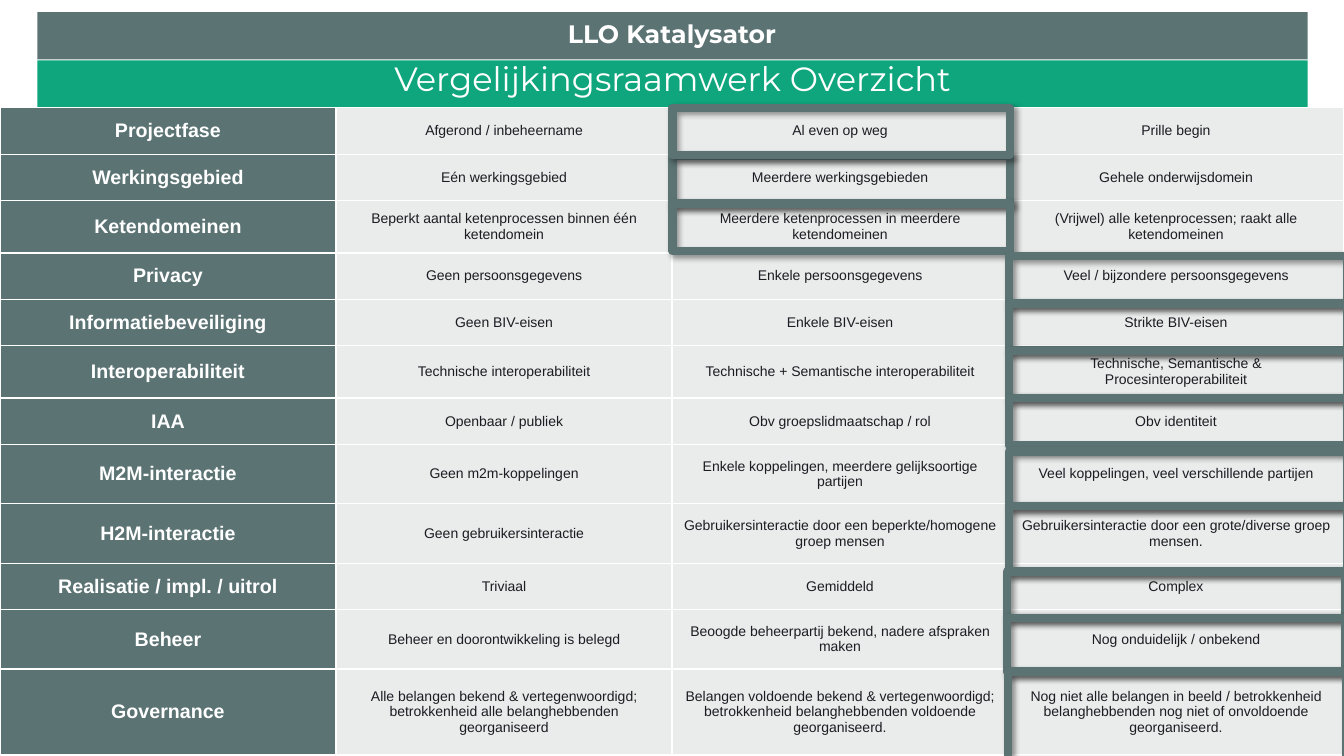
from lxml.etree import SubElement
from pptx import Presentation
from pptx.dml.color import RGBColor
from pptx.enum.shapes import MSO_SHAPE
from pptx.enum.text import MSO_ANCHOR, MSO_AUTO_SIZE, PP_ALIGN
from pptx.oxml import parse_xml
from pptx.oxml.ns import nsdecls, qn
from pptx.util import Inches, Pt

HEAD = "LLO Katalysator"
TITLE = "Vergelijkingsraamwerk Overzicht"
ROWS = [
    (0.46, "Projectfase", "Afgerond / inbeheername", "Al even op weg", "Prille begin"),
    (0.46, "Werkingsgebied", "Eén werkingsgebied", "Meerdere werkingsgebieden",
     "Gehele onderwijsdomein"),
    (0.52, "Ketendomeinen", "Beperkt aantal ketenprocessen binnen één ketendomein",
     "Meerdere ketenprocessen in meerdere ketendomeinen",
     "(Vrijwel) alle ketenprocessen; raakt alle ketendomeinen"),
    (0.46, "Privacy", "Geen persoonsgegevens", "Enkele persoonsgegevens",
     "Veel / bijzondere persoonsgegevens"),
    (0.46, "Informatiebeveiliging", "Geen BIV-eisen", "Enkele BIV-eisen",
     "Strikte BIV-eisen"),
    (0.52, "Interoperabiliteit", "Technische interoperabiliteit",
     "Technische + Semantische interoperabiliteit",
     "Technische, Semantische & Procesinteroperabiliteit"),
    (0.46, "IAA", "Openbaar / publiek", "Obv groepslidmaatschap / rol",
     "Obv identiteit"),
    (0.59, "M2M-interactie", "Geen m2m-koppelingen",
     "Enkele koppelingen, meerdere gelijksoortige partijen",
     "Veel koppelingen, veel verschillende partijen"),
    (0.59, "H2M-interactie", "Geen gebruikersinteractie",
     "Gebruikersinteractie door een beperkte/homogene groep mensen",
     "Gebruikersinteractie door een grote/diverse groep mensen."),
    (0.46, "Realisatie / impl. / uitrol", "Triviaal", "Gemiddeld", "Complex"),
    (0.59, "Beheer", "Beheer en doorontwikkeling is belegd",
     "Beoogde beheerpartij bekend, nadere afspraken maken",
     "Nog onduidelijk / onbekend"),
    (0.85, "Governance",
     "Alle belangen bekend & vertegenwoordigd; betrokkenheid alle belanghebbenden georganiseerd",
     "Belangen voldoende bekend & vertegenwoordigd; betrokkenheid belanghebbenden voldoende georganiseerd.",
     "Nog niet alle belangen in beeld / betrokkenheid belanghebbenden nog niet of onvoldoende georganiseerd."),
]
STACKS = [
    (6.67, 1.55, [0.47] * 2),
    (10.01, 2.54, [0.47] * 4),
    (10.01, 4.48, [0.54, 0.65]),
    (9.99, 5.67, [0.46, 0.54]),
    (10, 6.66, [0.88]),
    (6.67, 1.07, [0.47]),
]
HUES = {"slate": "5C7373", "green": "0FA67E", "pale": "EAEBEB",
        "ink": "1C1C22", "white": "FFFFFF"}
WIDE, HIGH = 13.33, 7.5
BAR = 0.47
TOP = 1.07
SHADOW = (
    f'<a:effectLst {nsdecls("a")}><a:outerShdw blurRad="50800" dist="38100" '
    'dir="2700000" algn="tl" rotWithShape="0"><a:srgbClr val="000000">'
    '<a:alpha val="40000"/></a:srgbClr></a:outerShdw></a:effectLst>'
)


def hue(name):
    return RGBColor.from_string(HUES[name])


def paint(part, name):
    part.fill.solid()
    part.fill.fore_color.rgb = hue(name)


def write(frame, text, size=10, font="Arial", color="ink", bold=False):
    par = frame.paragraphs[0]
    par.alignment = PP_ALIGN.CENTER
    run = par.add_run()
    run.text = text
    run.font.size = Pt(size)
    run.font.name = font
    run.font.bold = bold
    run.font.color.rgb = hue(color)


def pad(part):
    part.margin_left = part.margin_right = Inches(0.1)
    part.margin_top = part.margin_bottom = Inches(0.1)


def edge(cell):
    props = cell._tc.get_or_add_tcPr()
    for spot, side in enumerate("LRTB"):
        line = props.makeelement(qn(f"a:ln{side}"), {"w": str(Pt(1))})
        fill = SubElement(line, qn("a:solidFill"))
        SubElement(fill, qn("a:srgbClr"), val=HUES["white"])
        props.insert(spot, line)


def place(part, *box):
    part.left, part.top, part.width, part.height = map(Inches, box)


def rect(slide, *box):
    return slide.shapes.add_shape(MSO_SHAPE.RECTANGLE, *map(Inches, box))


def banner(slide):
    left, width = 0.37, 12.6
    bar = rect(slide, left, 0.12, width, BAR)
    bar.shadow.inherit = False
    bar.line.fill.background()
    paint(bar, "slate")

    title = slide.shapes.title
    place(title, left, TOP - BAR, width, BAR)
    paint(title, "green")
    head = slide.shapes.add_textbox(*map(Inches, (0.51, 0.07, 12.31, 0.53)))
    for part, anchor in ((title, MSO_ANCHOR.BOTTOM), (head, MSO_ANCHOR.MIDDLE)):
        frame = part.text_frame
        frame.word_wrap = True
        frame.auto_size = MSO_AUTO_SIZE.NONE
        frame.vertical_anchor = anchor
        pad(frame)
    write(title.text_frame, TITLE, size=24, font="Montserrat", color="white")
    write(head.text_frame, HEAD, size=18, font="Montserrat", color="white", bold=True)


def grid(slide):
    cols = len(ROWS[0]) - 1
    tall = sum(row[0] for row in ROWS)
    table = slide.shapes.add_table(
        len(ROWS), cols, 0, Inches(TOP), Inches(WIDE), Inches(tall)).table
    table.first_row = table.horz_banding = False
    for r, (height, *texts) in enumerate(ROWS):
        table.rows[r].height = Inches(height)
        for c, text in enumerate(texts):
            cell = table.cell(r, c)
            cell.vertical_anchor = MSO_ANCHOR.MIDDLE
            pad(cell)
            paint(cell, "pale" if c else "slate")
            edge(cell)
            look = {} if c else {"size": 14, "color": "white", "bold": True}
            write(cell.text_frame, text, **look)


def frames(slide):
    for left, top, heights in STACKS:
        for height in heights:
            box = rect(slide, left, top, 3.35, height)
            box.fill.background()
            box.line.color.rgb = hue("slate")
            box.line.width = Pt(6)
            box._element.spPr.append(parse_xml(SHADOW))
            top += height


def main():
    deck = Presentation()
    deck.slide_width, deck.slide_height = Inches(WIDE), Inches(HIGH)
    slide = deck.slides.add_slide(deck.slide_layouts[5])
    banner(slide)
    grid(slide)
    frames(slide)
    deck.save("out.pptx")


if __name__ == "__main__":
    main()
